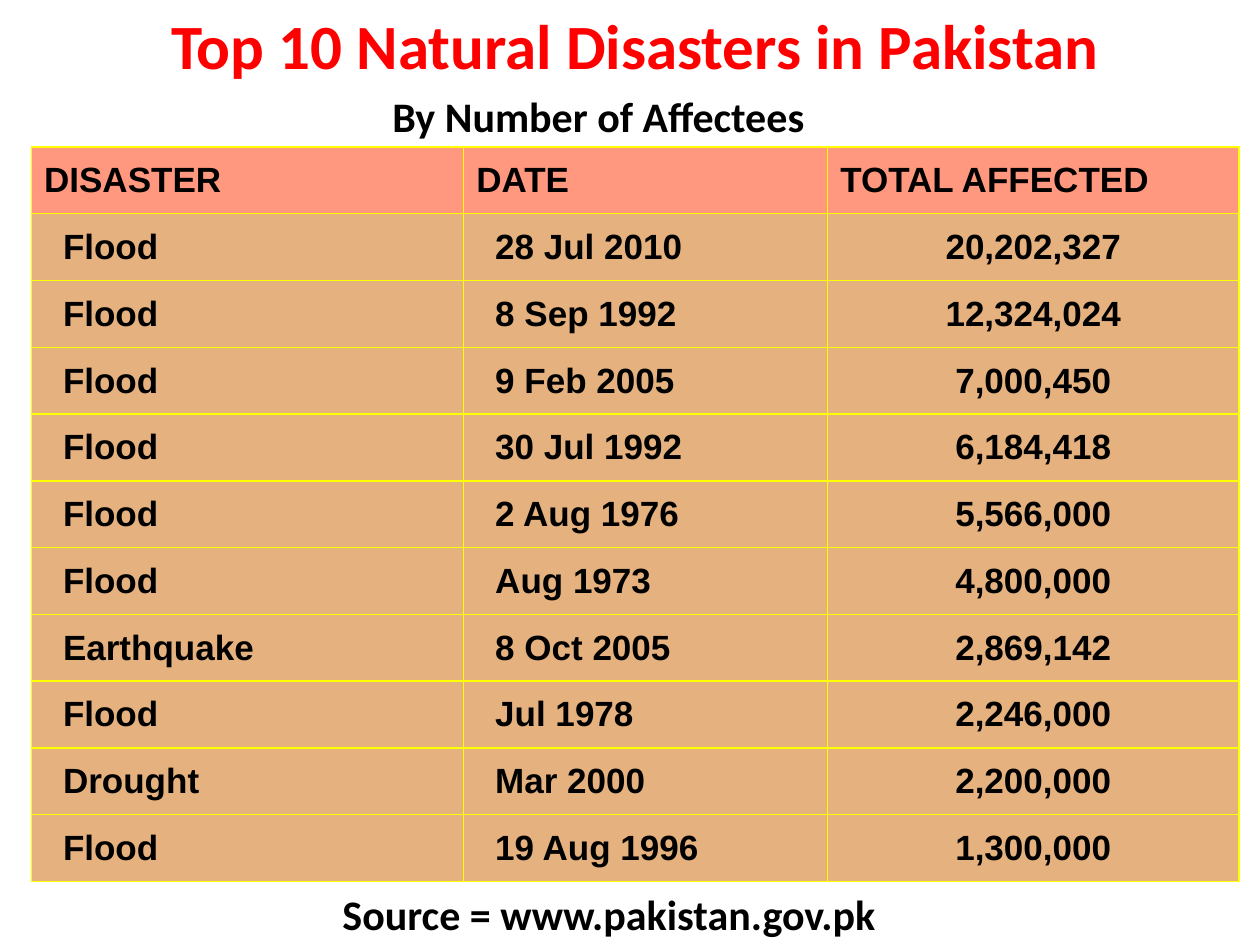
from lxml.etree import SubElement
from pptx import Presentation
from pptx.dml.color import RGBColor
from pptx.enum.text import MSO_ANCHOR, MSO_AUTO_SIZE, PP_ALIGN
from pptx.oxml.ns import qn
from pptx.util import Pt

HEADINGS = ("DISASTER", "DATE", "TOTAL AFFECTED")
DISASTERS = (
    ("Flood", "28 Jul 2010", "20,202,327"),
    ("Flood", "8 Sep 1992", "12,324,024"),
    ("Flood", "9 Feb 2005", "7,000,450"),
    ("Flood", "30 Jul 1992", "6,184,418"),
    ("Flood", "2 Aug 1976", "5,566,000"),
    ("Flood", "Aug 1973", "4,800,000"),
    ("Earthquake", "8 Oct 2005", "2,869,142"),
    ("Flood", "Jul 1978", "2,246,000"),
    ("Drought", "Mar 2000", "2,200,000"),
    ("Flood", "19 Aug 1996", "1,300,000"),
)


def color(hex_code):
    return RGBColor.from_string(hex_code)


class DisasterSlide:
    text_color = "000000"
    border_color = "FFFF00"
    heading_fill = "FF3300"
    body_fill = "CC6600"
    table_font = "Arial"
    caption_font = "Calibri"

    def __init__(self, slide):
        self.slide = slide

    def add_run(self, paragraph, text, font_name, size, hex_code):
        run = paragraph.add_run()
        run.text = text
        run.font.name = font_name
        run.font.size = Pt(size)
        run.font.bold = True
        run.font.color.rgb = color(hex_code)

    def add_caption(self, text, left, top, width, height, size=24,
                    hex_code=text_color, anchor=MSO_ANCHOR.TOP):
        box = self.slide.shapes.add_textbox(Pt(left), Pt(top), Pt(width), Pt(height))
        frame = box.text_frame
        frame.word_wrap = True
        frame.auto_size = MSO_AUTO_SIZE.SHAPE_TO_FIT_TEXT
        frame.vertical_anchor = anchor
        paragraph = frame.paragraphs[0]
        paragraph.alignment = PP_ALIGN.CENTER
        self.add_run(paragraph, text, self.caption_font, size, hex_code)

    def paint_cell(self, cell, fill_code):
        """Give the cell a half-transparent fill and a thin border all round."""
        cell.fill.solid()
        cell.fill.fore_color.rgb = color(fill_code)
        properties = cell._tc.get_or_add_tcPr()
        tint = properties.find(".//" + qn("a:srgbClr"))
        SubElement(tint, qn("a:alpha"), val="50000")
        for position, side in enumerate("LRTB"):
            line = SubElement(properties, qn("a:ln" + side), w=str(Pt(1)))
            fill = SubElement(line, qn("a:solidFill"))
            SubElement(fill, qn("a:srgbClr"), val=self.border_color)
            properties.insert(position, line)  # borders come before the fill

    def add_table(self, records, left, top, column_widths, row_height):
        frame = self.slide.shapes.add_table(
            len(records), len(column_widths), Pt(left), Pt(top),
            Pt(sum(column_widths)), Pt(row_height * len(records)))
        table = frame.table
        table.first_row = table.horz_banding = False
        for column, width in zip(table.columns, column_widths):
            column.width = Pt(width)
        for row_index, record in enumerate(records):
            table.rows[row_index].height = Pt(row_height)
            is_heading = row_index == 0
            for column_index, text in enumerate(record):
                cell = table.cell(row_index, column_index)
                self.paint_cell(cell, self.heading_fill if is_heading else self.body_fill)
                paragraph = cell.text_frame.paragraphs[0]
                paragraph.line_spacing = 1.2
                if not is_heading:
                    if column_index == len(record) - 1:
                        paragraph.alignment = PP_ALIGN.CENTER
                    else:
                        cell.margin_left = Pt(18)
                self.add_run(paragraph, text, self.table_font, 20, self.text_color)


def main():
    presentation = Presentation()
    presentation.slide_width, presentation.slide_height = Pt(720), Pt(540)
    page = DisasterSlide(presentation.slides.add_slide(presentation.slide_layouts[6]))
    page.add_table((HEADINGS, *DISASTERS), 18, 84, (247, 208, 235), 38.18)
    page.add_caption("By Number of Affectees", 54, 48, 576, 36)
    page.add_caption("Top 10 Natural Disasters in Pakistan", 18, 0, 690, 51,
                     size=36, hex_code="FF0000", anchor=MSO_ANCHOR.MIDDLE)
    page.add_caption("Source = www.pakistan.gov.pk", 132.5, 504, 431, 36)
    presentation.save("out.pptx")


if __name__ == "__main__":
    main()
